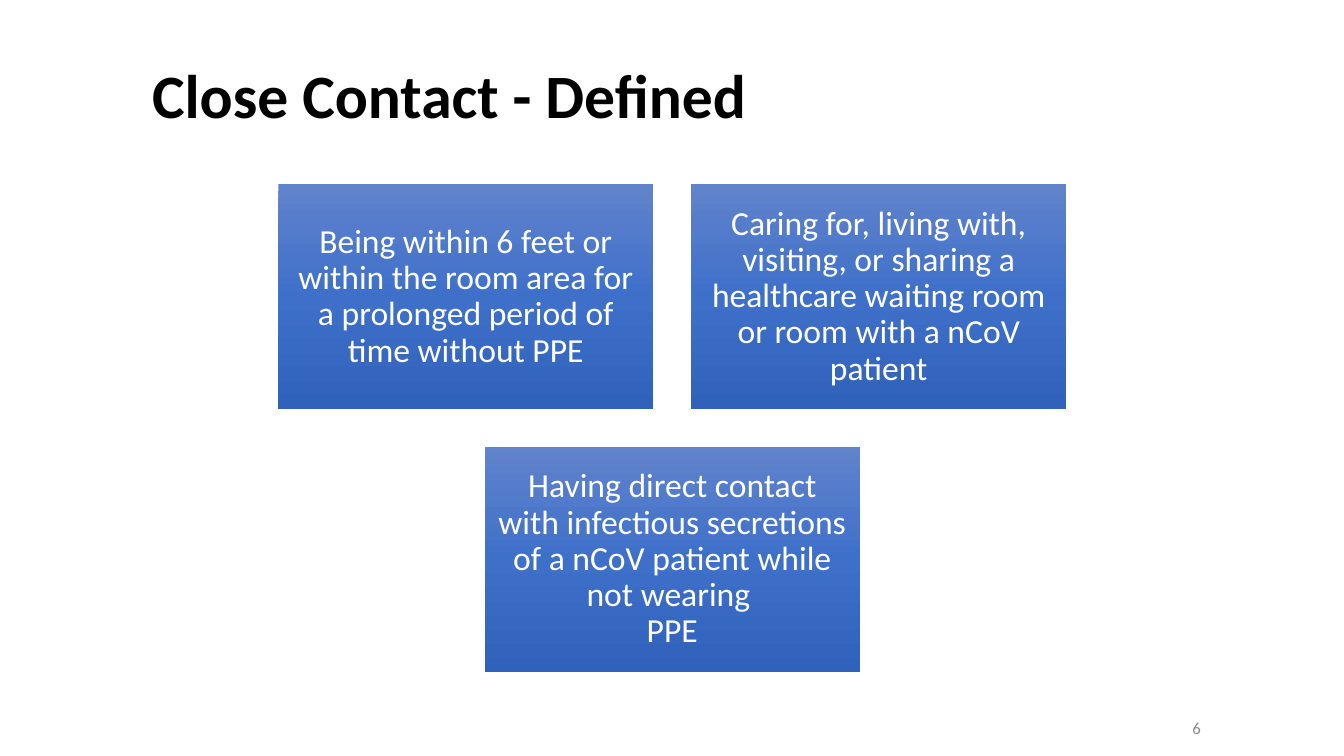
from copy import deepcopy

from pptx import Presentation
from pptx.dml.color import RGBColor
from pptx.enum.shapes import MSO_SHAPE
from pptx.enum.text import MSO_ANCHOR, PP_ALIGN
from pptx.util import Inches, Pt

COLORS = {
    "title": "000000",
    "number": "8C8C8C",
    "text": "FFFFFF",
    "top": "6183CB",
    "middle": "3E70CA",
    "bottom": "3062BB",
}

TITLE = {"size": Pt(44), "bold": True}
NUMBER = {"size": Pt(12)}
BODY = {"size": Pt(24)}

LEFT, TOP = 2.76, 1.83
WIDTH, HEIGHT = 3.72, 2.23
GAP = 0.375

# Column, row and wording; the last card is centred under the first two.
CARDS = [
    (0, 0, "Being within 6 feet or within the room area for "
           "a prolonged period of time without PPE"),
    (1, 0, "Caring for, living with, visiting, or sharing a "
           "healthcare waiting room or room with a nCoV patient"),
    (0.5, 1, "Having direct contact with infectious secretions "
             "of a nCoV patient while not wearing \vPPE"),
]


def color(name):
    return RGBColor.from_string(COLORS[name])


def write(shape, text, style, ink, align, space=0.9):
    frame = shape.text_frame
    frame.word_wrap = True
    frame.vertical_anchor = MSO_ANCHOR.MIDDLE
    para = frame.paragraphs[0]
    para.text = text
    para.alignment = align
    para.line_spacing = space
    for run in para.runs:
        run.font.name = "Calibri"
        run.font.color.rgb = color(ink)
        for key, value in style.items():
            setattr(run.font, key, value)


def add_label(slide, box, *args):
    shape = slide.shapes.add_textbox(*map(Inches, box))
    write(shape, *args)


def shade(fill):
    """Give a fill three colours that run from top to bottom."""
    fill.gradient()
    fill.gradient_angle = 270
    stops = fill._fill._gradFill.gsLst
    stops.insert(1, deepcopy(stops[0]))
    names = ("top", "middle", "bottom")
    for index, (stop, name) in enumerate(zip(fill.gradient_stops, names)):
        stop.position = index / 2
        stop.color.rgb = color(name)


def add_card(slide, col, row, text):
    left = LEFT + col * (WIDTH + GAP)
    top = TOP + row * (HEIGHT + GAP)
    box = map(Inches, (left, top, WIDTH, HEIGHT))
    card = slide.shapes.add_shape(MSO_SHAPE.RECTANGLE, *box)
    card.shadow.inherit = False
    card.line.fill.background()
    shade(card.fill)
    for side in ("left", "top", "right", "bottom"):
        setattr(card.text_frame, f"margin_{side}", Inches(0.1))
    write(card, text, BODY, "text", PP_ALIGN.CENTER)


def main():
    deck = Presentation()
    deck.slide_width = Inches(13.33)
    deck.slide_height = Inches(7.5)
    slide = deck.slides.add_slide(deck.slide_layouts[6])
    add_label(slide, (1.41, 0.25, 10.47, 1.45), "Close Contact - Defined",
              TITLE, "title", PP_ALIGN.LEFT)
    add_label(slide, (11.07, 7.02, 0.94, 0.4), "6",
              NUMBER, "number", PP_ALIGN.RIGHT, 1.0)
    for card in CARDS:
        add_card(slide, *card)
    deck.save("out.pptx")


if __name__ == "__main__":
    main()
